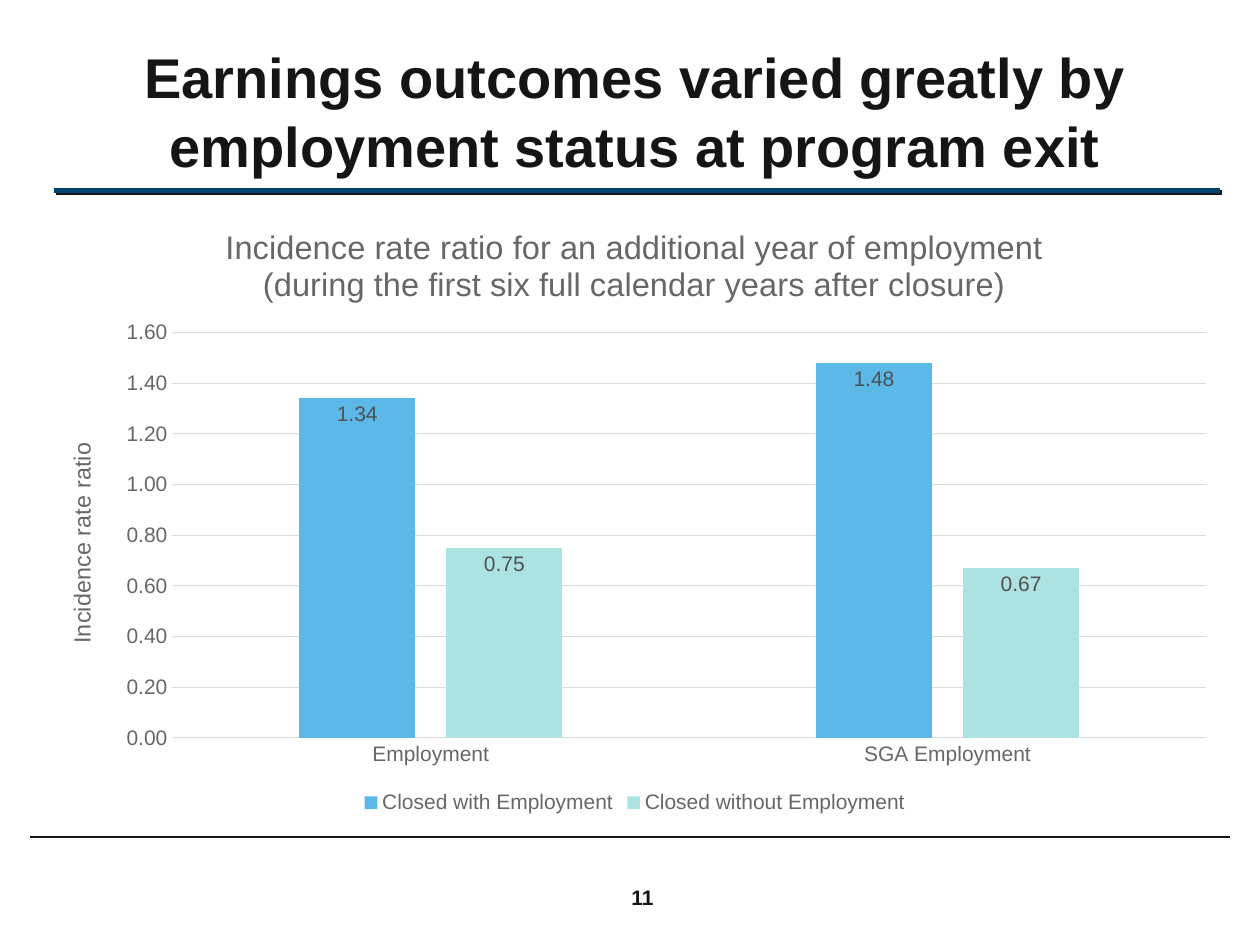
from dataclasses import dataclass

from lxml.etree import SubElement
from pptx import Presentation
from pptx.chart.data import CategoryChartData
from pptx.dml.color import RGBColor
from pptx.enum.chart import XL_CHART_TYPE, XL_LABEL_POSITION, XL_LEGEND_POSITION, XL_TICK_MARK
from pptx.enum.shapes import MSO_CONNECTOR
from pptx.enum.text import MSO_ANCHOR, MSO_AUTO_SIZE, PP_ALIGN
from pptx.oxml.ns import qn
from pptx.util import Cm, Pt

COLORS = {
    "ink": "151515",
    "navy": "00436E",
    "gray": "676767",
    "label": "505050",
    "grid": "DCDCDC",
    "blue": "5CB9E7",
    "mint": "ADE2E2",
}


@dataclass
class Rule:
    left: float
    right: float
    top: float
    color: str
    width: float
    shadow: bool = False


@dataclass
class Series:
    name: str
    values: tuple[float, ...]
    color: str


RULES = [
    Rule(1.09, 24.59, 3.84, "navy", 3, shadow=True),
    Rule(0.61, 24.79, 16.87, "ink", 1.5),
]
GROUPS = ["Employment", "SGA Employment"]
SERIES = [
    Series("Closed with Employment", (1.34, 1.48), "blue"),
    Series("Closed without Employment", (0.75, 0.67), "mint"),
]


def paint(name: str) -> RGBColor:
    return RGBColor.from_string(COLORS[name])


def style(font, size: float, color: str, bold: bool = False) -> None:
    font.name = "Arial"
    font.size = Pt(size)
    font.bold = bold
    font.color.rgb = paint(color)


def write(frame, text: str, *, size: float, color: str, bold: bool = False,
          spacing: float | None = None) -> None:
    for index, line in enumerate(text.split("\n")):
        para = frame.add_paragraph() if index else frame.paragraphs[0]
        para.alignment = PP_ALIGN.CENTER
        para.line_spacing = spacing
        run = para.add_run()
        run.text = line
        style(run.font, size, color, bold)


def draw_rule(slide, rule: Rule) -> None:
    line = slide.shapes.add_connector(
        MSO_CONNECTOR.STRAIGHT, Cm(rule.left), Cm(rule.top), Cm(rule.right), Cm(rule.top))
    line.line.color.rgb = paint(rule.color)
    line.line.width = Pt(rule.width)
    effects = SubElement(line._element.spPr, qn("a:effectLst"))
    if rule.shadow:
        shade = SubElement(effects, qn("a:outerShdw"), dist=str(Pt(1.4)), dir="2700000",
                           algn="ctr", rotWithShape="0")
        SubElement(shade, qn("a:srgbClr"), val=COLORS["ink"])


def draw_title(slide, text: str) -> None:
    title = slide.shapes.title
    title.left, title.top, title.width, title.height = Cm(1.07), Cm(0.56), Cm(23.47), Cm(3.18)
    frame = title.text_frame
    frame.word_wrap = True
    frame.auto_size = MSO_AUTO_SIZE.NONE
    frame.vertical_anchor = MSO_ANCHOR.BOTTOM
    write(frame, text, size=32, color="ink", bold=True, spacing=1.04)


def draw_number(slide, text: str) -> None:
    box = slide.shapes.add_textbox(Cm(12.27), Cm(17.7), Cm(1.37), Cm(0.76))
    box.text_frame.word_wrap = True
    write(box.text_frame, text, size=12, color="ink", bold=True)


def format_axes(chart) -> None:
    for axis in (chart.category_axis, chart.value_axis):
        axis.major_tick_mark = axis.minor_tick_mark = XL_TICK_MARK.NONE
        style(axis.tick_labels.font, 12, "gray")
    base = chart.category_axis.format.line
    scale = chart.value_axis
    scale.minimum_scale, scale.maximum_scale, scale.major_unit = 0, 1.6, 0.2
    scale.tick_labels.number_format = "0.00"
    scale.tick_labels.number_format_is_linked = False
    scale.format.line.fill.background()
    for line in (base, scale.major_gridlines.format.line):
        line.color.rgb = paint("grid")
        line.width = Pt(0.75)
    title = scale.axis_title
    write(title.text_frame, "Incidence rate ratio", size=13.3, color="gray")
    body = title._element.xpath(".//a:bodyPr")[0]
    body.set("rot", "-5400000")
    body.set("vert", "horz")


def format_bars(chart) -> None:
    plot = chart.plots[0]
    plot.gap_width, plot.overlap, plot.vary_by_categories = 219, -27, False
    for bars, item in zip(plot.series, SERIES):
        bars.format.fill.solid()
        bars.format.fill.fore_color.rgb = paint(item.color)
        labels = bars.data_labels
        labels.show_value = True
        labels.position = XL_LABEL_POSITION.INSIDE_END
        labels.number_format = "0.00"
        labels.number_format_is_linked = False
        style(labels.font, 12, "label")


def draw_chart(slide) -> None:
    data = CategoryChartData(number_format="0.00")
    data.categories = GROUPS
    for item in SERIES:
        data.add_series(item.name, item.values)
    chart = slide.shapes.add_chart(
        XL_CHART_TYPE.COLUMN_CLUSTERED, Cm(0.81), Cm(4.11), Cm(23.98), Cm(12.4), data).chart
    style(chart.font, 10, "ink")
    chart.has_title = True
    chart.chart_title.include_in_layout = False
    write(chart.chart_title.text_frame,
          "Incidence rate ratio for an additional year of employment\n"
          "(during the first six full calendar years after closure)",
          size=18.6, color="gray")
    chart.has_legend = True
    chart.legend.position = XL_LEGEND_POSITION.BOTTOM
    chart.legend.include_in_layout = False
    style(chart.legend.font, 12, "gray")
    format_axes(chart)
    format_bars(chart)


def main() -> None:
    deck = Presentation()
    deck.slide_width, deck.slide_height = Cm(25.4), Cm(19.05)
    slide = deck.slides.add_slide(deck.slide_layouts[5])
    for rule in RULES:
        draw_rule(slide, rule)
    draw_number(slide, "11")
    draw_chart(slide)
    draw_title(slide, "Earnings outcomes varied greatly by employment status at program exit")
    deck.save("out.pptx")


if __name__ == "__main__":
    main()
